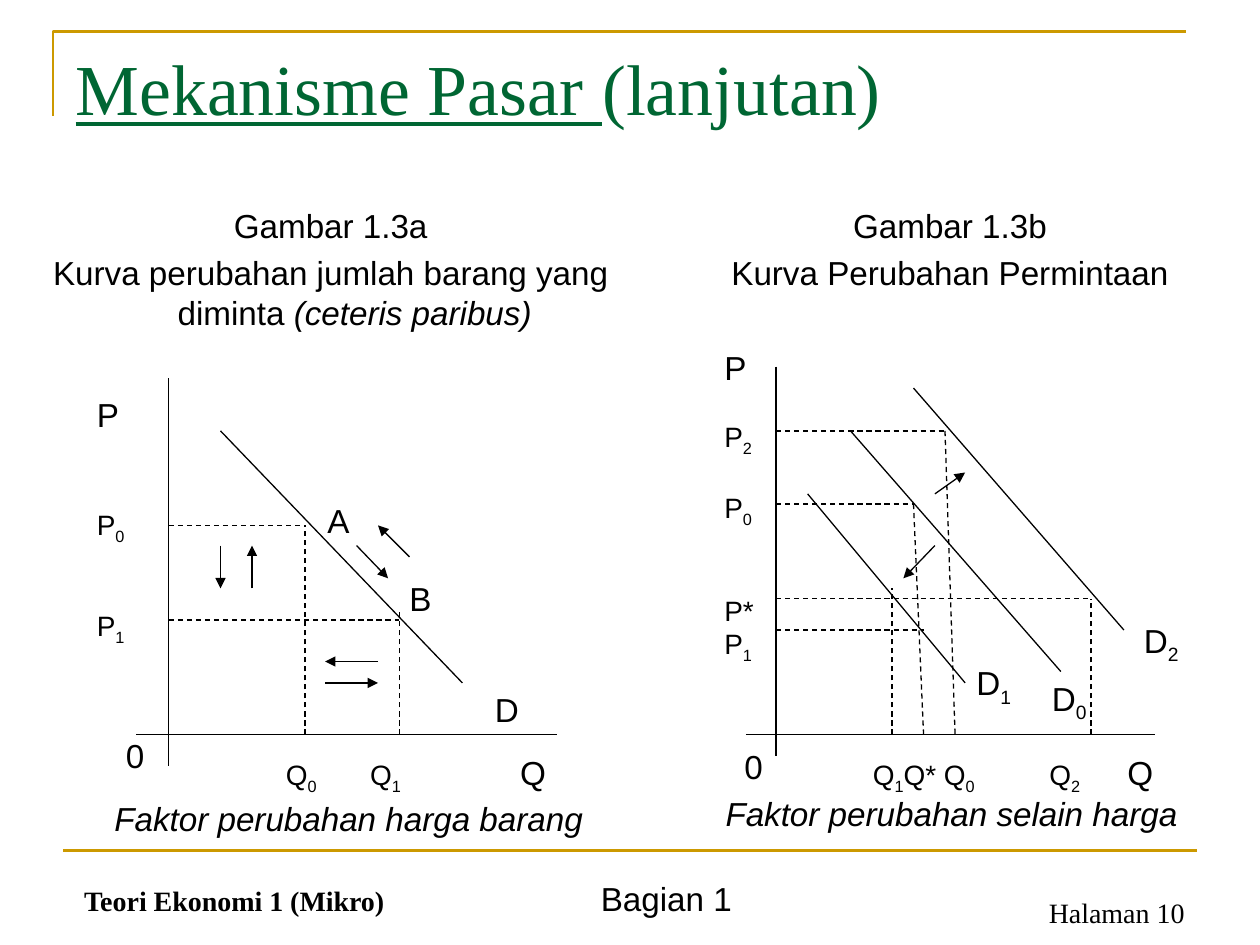
"""Build the slide on movement along and shifts of the demand curve."""
from lxml.etree import SubElement
from pptx import Presentation
from pptx.dml.color import RGBColor
from pptx.enum.dml import MSO_LINE
from pptx.enum.shapes import MSO_CONNECTOR
from pptx.enum.text import MSO_ANCHOR, MSO_AUTO_SIZE, PP_ALIGN
from pptx.oxml.ns import qn
from pptx.util import Inches, Pt

COLORS = {"gold": "CC9900", "green": "006633", "black": "000000"}
SANS, SERIF = "Arial", "Times New Roman"
LARGE, SMALL = 19, 16

TITLE = [("Mekanisme Pasar ", True), ("(lanjutan)", False)]
CAPTIONS = [
    ((0.25, 1.58, 4.75, 5.21), "Gambar 1.3a",
     [("Kurva perubahan jumlah barang yang diminta ", False), ("(ceteris paribus)", True)]),
    ((5.33, 1.58, 4.42, 5.29), "Gambar 1.3b", [("Kurva Perubahan Permintaan", False)]),
]
BRACKET = [(0.42, 0.92), (0.42, 0.25), (9.41, 0.25)]
FOOTER_RULE = (0.5, 6.75, 9.5, 6.75)

SOLID_LINES = [
    (1.34, 3, 1.34, 6.08), (1.08, 5.83, 4.42, 5.83), (1.75, 3.42, 3.67, 5.42),
    (6.16, 2.91, 6.16, 6), (5.92, 5.83, 9.17, 5.83), (6.75, 3.42, 8.42, 5.33),
    (7.25, 3.08, 8.92, 5), (6.41, 3.92, 7.66, 5.42),
]
DASHED_LINES = [
    (1.34, 4.17, 2.42, 4.17), (1.34, 4.92, 3.17, 4.92),
    (2.42, 5.83, 2.42, 4.17), (3.17, 5.83, 3.17, 4.84),
    (6.16, 4, 7.25, 4), (6.16, 3.42, 7.5, 3.42),
    (6.16, 4.75, 8.66, 4.75), (6.16, 5, 7.33, 5),
    (7.5, 3.42, 7.58, 5.83), (7.25, 4, 7.33, 5.83),
    (8.66, 5.83, 8.66, 4.75), (7.08, 5.83, 7.08, 4.67),
]
ARROWS = [
    (2.83, 4.33, 3.08, 4.59), (3.25, 4.42, 3, 4.17),
    (1.75, 4.33, 1.75, 4.67), (2, 4.67, 2, 4.33),
    (2.58, 5.42, 3, 5.42), (3, 5.25, 2.58, 5.25),
    (7.42, 3.92, 7.66, 3.75), (7.42, 4.33, 7.17, 4.59),
]
PRICE_SCALES = [
    ((0.67, 3.08, 0.58, 2.57),
     [("P", LARGE, 0), ("P_0", SMALL, 42), ("P_1", SMALL, 36)]),
    ((5.65, 2.71, 0.44, 2.87),
     [("P", LARGE, 0), ("P_2", SMALL, 18.5), ("P_0", SMALL, 18.5),
      ("P*", SMALL, 37), ("P_1", SMALL, 0)]),
]
QUANTITY_SCALES = [
    ((2.17, 5.92, 2.67, 0.42), [("Q_0\tQ_1\t", SMALL), ("Q", LARGE)], (0.67, 1.86)),
    ((6.83, 5.92, 2.67, 0.42), [("Q_1Q* Q_0\tQ_2\t", SMALL), ("Q", LARGE)], (1.4, 2.02)),
]
CURVE_LABELS = [
    ("D", 3.83, 5.42, 0.42), ("A", 2.5, 3.92, 0.5), ("B", 3.15, 4.54, 0.38),
    ("0", 0.9, 5.79, 0.35), ("0", 5.81, 5.87, 0.35),
    ("D_2", 8.98, 4.87, 0.49), ("D_0", 8.25, 5.33, 0.49), ("D_1", 7.65, 5.21, 0.49),
    ("Bagian 1", 4.67, 6.92, 2.08),
]
FACTORS = [
    ("Faktor perubahan harga barang", 0.81, 6.29, 3.94),
    ("Faktor perubahan selain harga", 5.66, 6.25, 3.81),
]


def color(name):
    return RGBColor.from_string(COLORS[name])


def style(font, size, face=SANS, tint="black"):
    font.size, font.name = Pt(size), face
    font.color.rgb = color(tint)


def place(shape, box):
    shape.left, shape.top, shape.width, shape.height = map(Inches, box)


def add_line(slide, ends, tint="black", width=0.75, dashed=False, arrow=False):
    line = slide.shapes.add_connector(MSO_CONNECTOR.STRAIGHT, *map(Inches, ends))
    line.line.color.rgb = color(tint)
    line.line.width = Pt(width)
    if dashed:
        line.line.dash_style = MSO_LINE.DASH
    if arrow:
        SubElement(line.line._get_or_add_ln(), qn("a:tailEnd"), type="triangle")
    SubElement(line._element.spPr, qn("a:effectLst"))


def add_runs(paragraph, text, size=None):
    plain, *marked = text.split("_")
    pieces = [(plain, False)]
    for part in marked:
        pieces += [(part[0], True), (part[1:], False)]
    for piece, lowered in pieces:
        if piece:
            run = paragraph.add_run()
            run.text = piece
            if size:
                run.font.size = Pt(size)
            if lowered:
                run._r.get_or_add_rPr().set("baseline", "-25000")


def add_text(slide, box, text="", size=LARGE, face=SANS, wrap=True):
    frame = slide.shapes.add_textbox(*map(Inches, box)).text_frame
    frame.word_wrap = wrap
    paragraph = frame.paragraphs[0]
    style(paragraph.font, size, face)
    add_runs(paragraph, text)
    return frame


def add_caption(holder, box, heading, description):
    place(holder, box)
    frame = holder.text_frame
    frame.auto_size = MSO_AUTO_SIZE.NONE
    frame.text = heading
    detail = frame.add_paragraph()
    for words, italic in description:
        run = detail.add_run()
        run.text = words
        if italic:
            run.font.italic = True
    for paragraph in frame.paragraphs:
        paragraph.alignment = PP_ALIGN.CENTER
        paragraph.space_before = Pt(4)
        style(paragraph.font, LARGE)
        properties = paragraph._p.get_or_add_pPr()
        properties.set("marL", str(Inches(0.38)))
        properties.set("indent", str(-Inches(0.38)))
        properties.insert_element_before(
            properties.makeelement(qn("a:buNone")), "a:tabLst", "a:defRPr")


def add_title(title):
    place(title, (0.5, 0.3, 9, 1.25))
    frame = title.text_frame
    frame.auto_size = MSO_AUTO_SIZE.NONE
    frame.vertical_anchor = MSO_ANCHOR.TOP
    paragraph = frame.paragraphs[0]
    paragraph.alignment = PP_ALIGN.LEFT
    style(paragraph.font, 41, SERIF, "green")
    for words, underlined in TITLE:
        run = paragraph.add_run()
        run.text = words
        run.font.underline = underlined


def add_price_scale(slide, box, prices):
    frame = add_text(slide, box)
    for index, (price, size, gap) in enumerate(prices):
        paragraph = frame.add_paragraph() if index else frame.paragraphs[0]
        style(paragraph.font, size)
        paragraph.space_before = Pt(gap)
        add_runs(paragraph, price)


def add_quantity_scale(slide, box, quantities, stops):
    paragraph = add_text(slide, box).paragraphs[0]
    for words, size in quantities:
        add_runs(paragraph, words, size)
    properties = paragraph._p.get_or_add_pPr()
    tabs = properties.makeelement(qn("a:tabLst"))
    for stop in stops:
        SubElement(tabs, qn("a:tab"), pos=str(Inches(stop)), algn="l")
    properties.insert_element_before(tabs, "a:defRPr")


def main():
    deck = Presentation()
    deck.slide_width, deck.slide_height = Inches(10), Inches(7.5)
    slide = deck.slides.add_slide(deck.slide_layouts[3])
    title, *bodies = slide.placeholders
    add_title(title)
    for body, caption in zip(bodies, CAPTIONS):
        add_caption(body, *caption)

    start, *corners = [(Inches(x), Inches(y)) for x, y in BRACKET]
    builder = slide.shapes.build_freeform(*start)
    builder.add_line_segments(corners, close=False)
    bracket = builder.convert_to_shape()
    bracket.shadow.inherit = False
    bracket.fill.background()
    bracket.line.color.rgb = color("gold")
    bracket.line.width = Pt(1.5)
    add_line(slide, FOOTER_RULE, "gold", 1.5)

    for ends in SOLID_LINES:
        add_line(slide, ends)
    for ends in DASHED_LINES:
        add_line(slide, ends, dashed=True)
    for ends in ARROWS:
        add_line(slide, ends, arrow=True)
    for scale in PRICE_SCALES:
        add_price_scale(slide, *scale)
    for scale in QUANTITY_SCALES:
        add_quantity_scale(slide, *scale)
    for label, left, top, width in CURVE_LABELS:
        add_text(slide, (left, top, width, 0.42), label)
    for factor, left, top, width in FACTORS:
        frame = add_text(slide, (left, top, width, 0.42), factor, wrap=False)
        frame.paragraphs[0].font.italic = True

    course = add_text(slide, (0.57, 6.83, 3.68, 0.5), "Teori Ekonomi 1 (Mikro)", SMALL, SERIF)
    course.vertical_anchor = MSO_ANCHOR.BOTTOM
    course.paragraphs[0].font.bold = True
    page = add_text(slide, (7.17, 6.83, 2.33, 0.52), "Halaman 10", SMALL, SERIF)
    page.margin_top, page.margin_bottom = Inches(0.28), 0
    page.paragraphs[0].alignment = PP_ALIGN.RIGHT
    deck.save("out.pptx")


if __name__ == "__main__":
    main()
